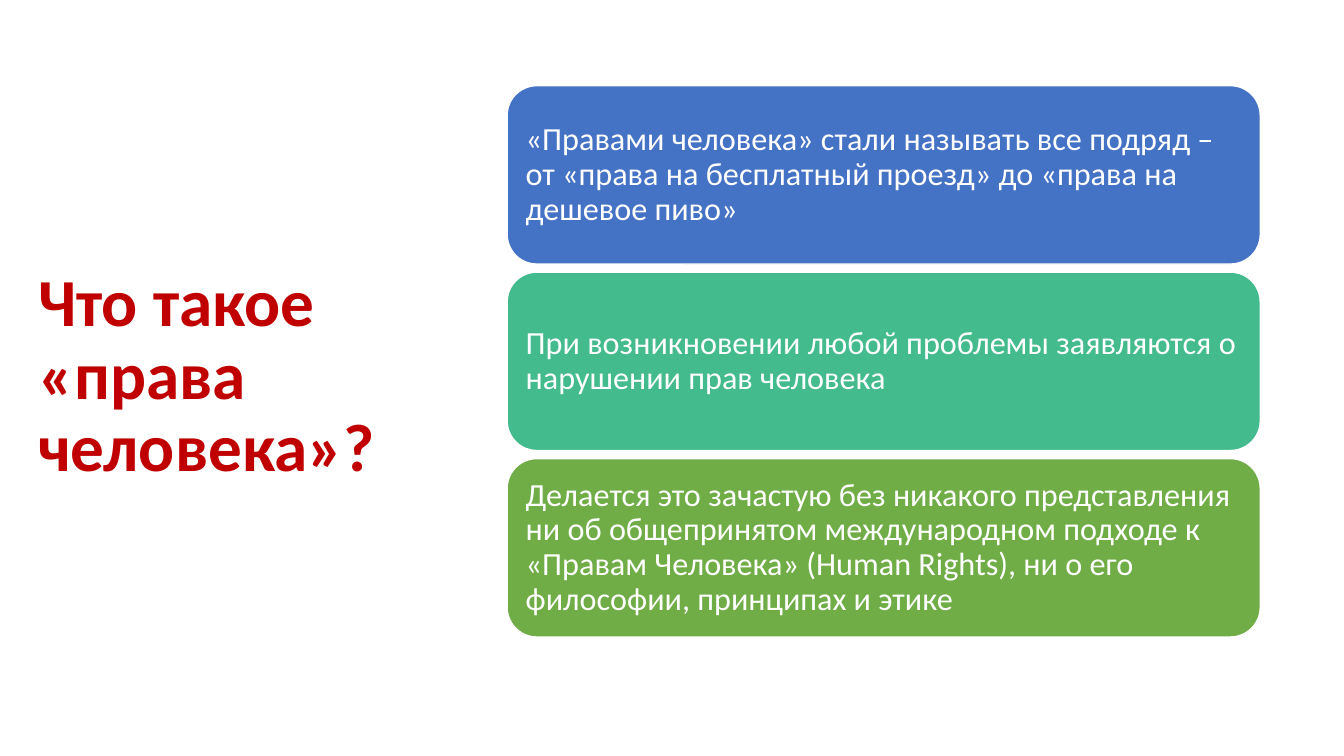
from pptx import Presentation
from pptx.dml.color import RGBColor
from pptx.enum.shapes import MSO_SHAPE
from pptx.enum.text import MSO_ANCHOR, PP_ALIGN
from pptx.util import Pt

PX = 9144  # EMU in one px, 100 px to the inch
WHITE = RGBColor(0xFF, 0xFF, 0xFF)
RED = RGBColor(0xC0, 0x00, 0x00)
BLUE = RGBColor(0x44, 0x72, 0xC4)
TEAL = RGBColor(0x43, 0xBB, 0x8D)
GREEN = RGBColor(0x70, 0xAD, 0x47)

TITLE = "Что такое «права человека»?"
STATEMENTS = [
    (BLUE, "«Правами человека» стали называть все подряд – "
           "от «права на бесплатный проезд» до «права на дешевое пиво»"),
    (TEAL, "При возникновении любой проблемы заявляются о нарушении прав человека"),
    (GREEN, "Делается это зачастую без никакого представления ни об общепринятом "
            "международном подходе к «Правам Человека» (Human Rights), "
            "ни о его философии, принципах и этике"),
]


def px(*lengths):
    return [length * PX for length in lengths]


def write_text(shape, text, size, color, bold=False):
    frame = shape.text_frame
    frame.word_wrap = True
    frame.vertical_anchor = MSO_ANCHOR.MIDDLE
    para = frame.paragraphs[0]
    para.text = text
    para.alignment = PP_ALIGN.LEFT
    para.line_spacing = 0.9
    para.font.name = "Calibri"
    para.font.size = Pt(size)
    para.font.bold = bold
    para.font.color.rgb = color


def add_title(page, left, top, width, height):
    box = page.shapes.add_textbox(*px(left, top, width, height))
    write_text(box, TITLE, 48, RED, bold=True)


def add_statements(page, left, top, width, height, gap=8):
    """Stack equal rounded cards that fill the given box."""
    count = len(STATEMENTS)
    card_height = (height - gap * (count - 1)) // count
    for index, (color, text) in enumerate(STATEMENTS):
        card_top = top + index * (card_height + gap)
        card = page.shapes.add_shape(
            MSO_SHAPE.ROUNDED_RECTANGLE, *px(left, card_top, width, card_height))
        card.shadow.inherit = False
        card.fill.solid()
        card.fill.fore_color.rgb = color
        card.line.color.rgb = WHITE
        card.line.width = Pt(1)
        write_text(card, text, 23, WHITE)
        # The rounded corners already inset the text on every side
        frame = card.text_frame
        frame.margin_left = frame.margin_right = 10 * PX
        frame.margin_top = frame.margin_bottom = 10 * PX


def main():
    deck = Presentation()
    deck.slide_width, deck.slide_height = px(1333, 750)
    page = deck.slides.add_slide(deck.slide_layouts[6])
    add_title(page, 28, 48, 390, 653)
    add_statements(page, 503, 85, 747, 547)
    deck.save("out.pptx")


if __name__ == "__main__":
    main()
